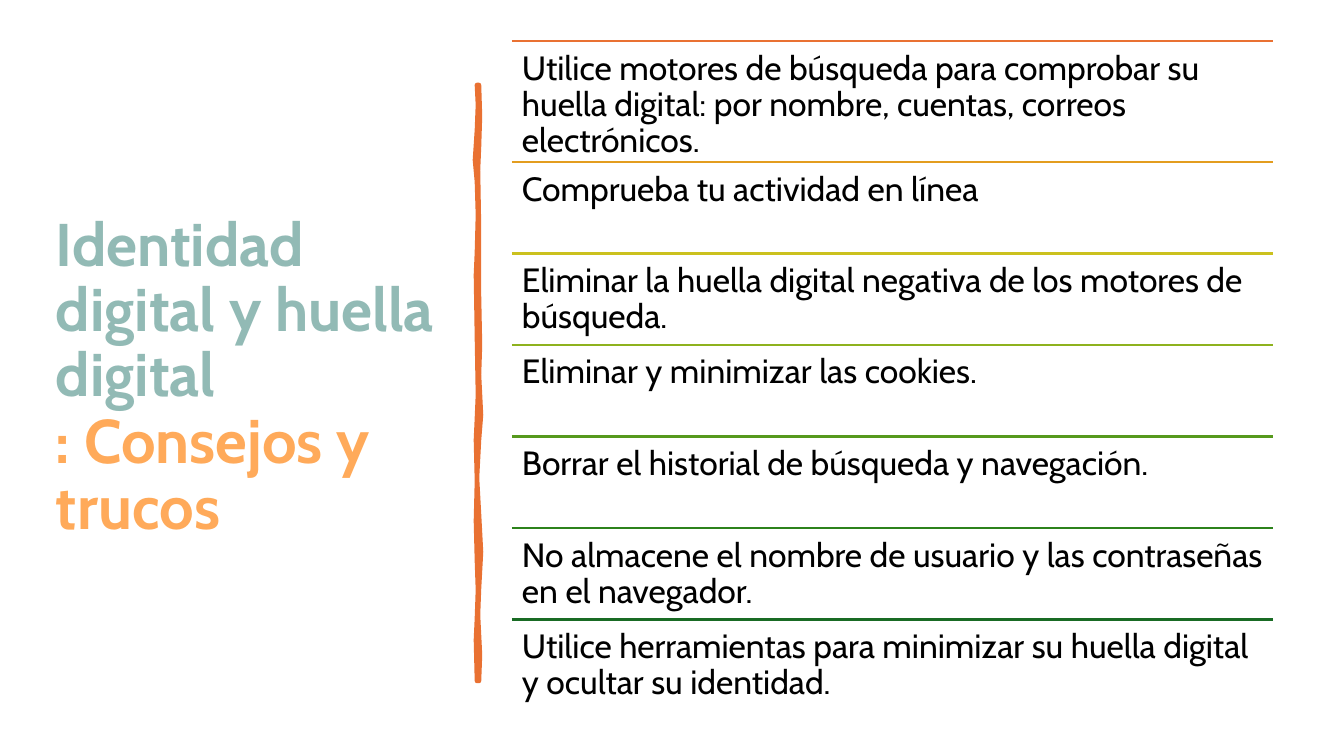
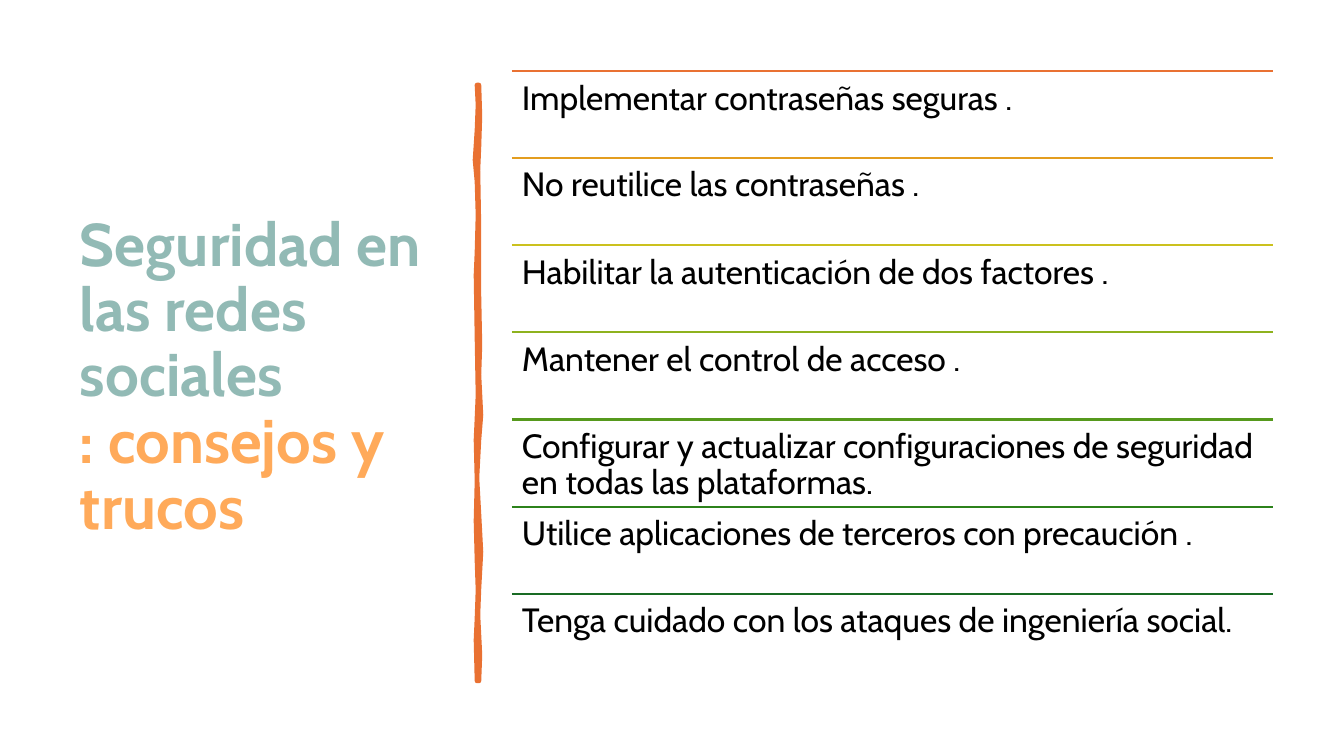
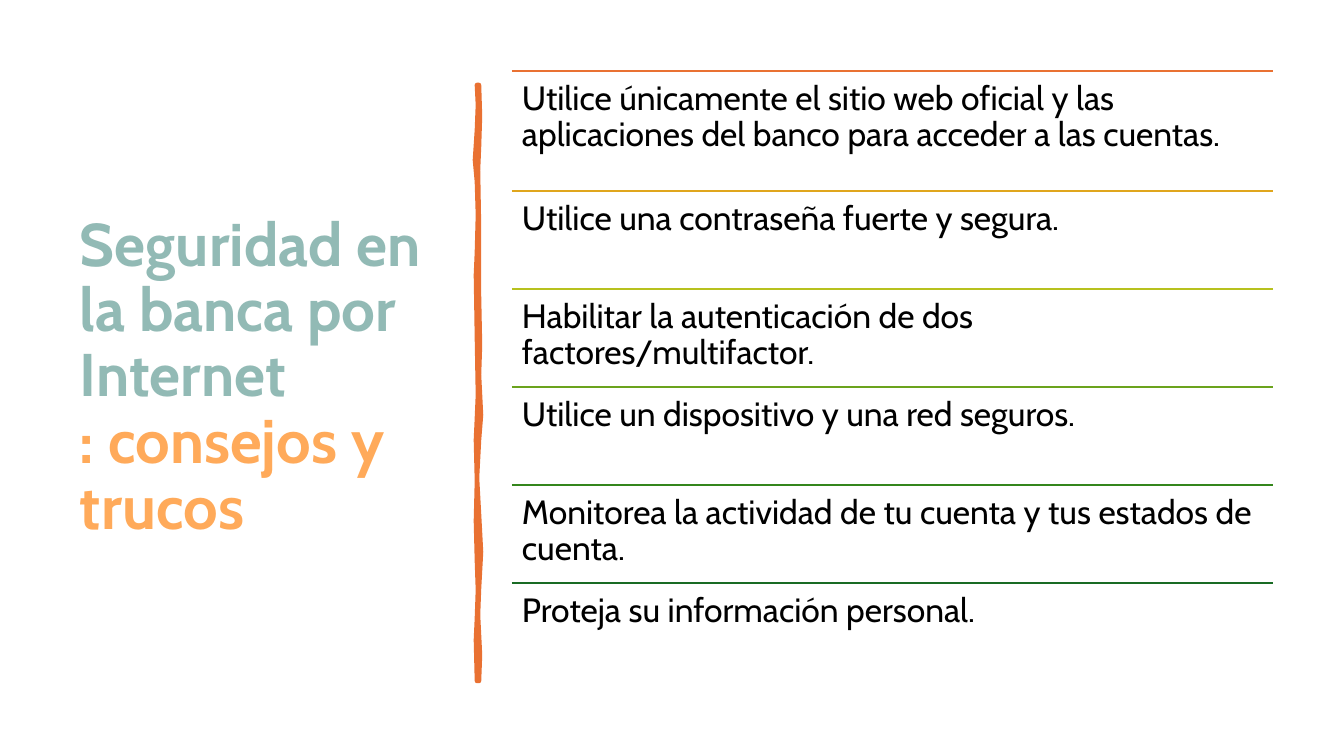
from pptx import Presentation
from pptx.dml.color import RGBColor
from pptx.enum.shapes import MSO_CONNECTOR
from pptx.enum.text import MSO_ANCHOR
from pptx.oxml.ns import qn
from pptx.util import Pt
from lxml.etree import SubElement

SCALE = 914400 / 100.8
WIDE, HIGH = 1344, 756
FONT = "Cabin"
TEAL, PEACH, RUST, BLACK = "92BAB5", "FFAA5A", "E97132", "000000"
LEFT, SPAN = 512, 761
SEVEN = [RUST, "E39D1F", "CBC11E", "8EB21E", "56991D", "2C821B", "196B24"]
SIX = [RUST, "E0A61D", "B7C11E", "6BA31D", "34861C", "196B24"]
MARGINS = ("margin_left", "margin_top", "margin_right", "margin_bottom")

BAR = [
    (479, 85), (480, 116), (479, 147), (478, 170), (479, 228), (479, 296),
    (480, 345), (479, 375), (481, 415), (479, 440), (477, 478), (479, 514),
    (481, 552), (479, 589), (478, 615), (480, 655), (479, 681),
    (477, 681), (476, 640), (477, 618), (478, 590), (477, 561), (476, 521),
    (477, 481), (476, 440), (477, 418), (478, 395), (477, 338), (476, 275),
    (477, 252), (478, 215), (477, 182), (475, 160), (477, 130), (478, 105),
    (477, 85),
]

SLIDES = [
    {
        "title": ("Identidad digital y huella digital", ": Consejos y trucos"),
        "box": (46, 401),
        "ends": (41, 162, 711),
        "hues": SEVEN,
        "tips": [
            "Utilice motores de búsqueda para comprobar su huella digital: "
            "por nombre, cuentas, correos electrónicos.",
            "Comprueba tu actividad en línea",
            "Eliminar la huella digital negativa de los motores de búsqueda.",
            "Eliminar y minimizar las cookies.",
            "Borrar el historial de búsqueda y navegación.",
            "No almacene el nombre de usuario y las contraseñas en el navegador.",
            "Utilice herramientas para minimizar su huella digital "
            "y ocultar su identidad.",
        ],
    },
    {
        "title": ("Seguridad en las redes sociales", ": consejos y trucos"),
        "box": (70, 377),
        "ends": (71, 158, 681),
        "hues": SEVEN,
        "tips": [
            "Implementar contraseñas seguras .",
            "No reutilice las contraseñas .",
            "Habilitar la autenticación de dos factores .",
            "Mantener el control de acceso .",
            "Configurar y actualizar configuraciones de seguridad "
            "en todas las plataformas.",
            "Utilice aplicaciones de terceros con precaución .",
            "Tenga cuidado con los ataques de ingeniería social.",
        ],
    },
    {
        "title": ("Seguridad en la banca por Internet", ": consejos y trucos"),
        "box": (70, 377),
        "ends": (71, 191, 681),
        "hues": SIX,
        "tips": [
            "Utilice únicamente el sitio web oficial y las aplicaciones "
            "del banco para acceder a las cuentas.",
            "Utilice una contraseña fuerte y segura.",
            "Habilitar la autenticación de dos factores/multifactor.",
            "Utilice un dispositivo y una red seguros.",
            "Monitorea la actividad de tu cuenta y tus estados de cuenta.",
            "Proteja su información personal.",
        ],
    },
]


def px(size):
    return round(size * SCALE)


def color(code):
    return RGBColor.from_string(code)


def apply(item, form):
    for key, value in form.items():
        setattr(item, key, value)


def add_run(para, text, size, hue, bold=False):
    run = para.add_run()
    run.text = text
    apply(run.font, {"name": FONT, "size": Pt(size), "bold": bold})
    run.font.color.rgb = color(hue)


def add_box(slide, area, anchor):
    frame = slide.shapes.add_textbox(*map(px, area)).text_frame
    apply(frame, {"word_wrap": True, "vertical_anchor": anchor})
    apply(frame, dict.fromkeys(MARGINS, px(10)))
    para = frame.paragraphs[0]
    para.line_spacing = 0.9
    return para


def add_title(slide, parts, left, width):
    para = add_box(slide, (left, 71, width, 616), MSO_ANCHOR.MIDDLE)
    add_run(para, parts[0], 43, TEAL, True)
    para.add_line_break()
    add_run(para, parts[1], 44, PEACH, True)


def add_bar(slide):
    pen = slide.shapes.build_freeform(*BAR[0], scale=SCALE)
    pen.add_line_segments(BAR[1:], close=True)
    bar = pen.convert_to_shape()
    bar.shadow.inherit = False
    bar.fill.solid()
    bar.fill.fore_color.rgb = color(RUST)
    bar.line.color.rgb = color(RUST)
    bar.line.width = Pt(3.25)


def add_rule(slide, top, hue):
    ends = map(px, (LEFT, top, LEFT + SPAN, top))
    rule = slide.shapes.add_connector(MSO_CONNECTOR.STRAIGHT, *ends)
    rule.line.color.rgb = color(hue)
    rule.line.width = Pt(1.5)
    SubElement(rule._element.spPr, qn("a:effectLst"))


def add_tips(slide, tips, hues, ends):
    first, second, last = ends
    count = len(tips) - 1
    step = (last - second) / count
    tops = [first] + [second + step * i for i in range(count + 1)]
    for tip, hue, top, end in zip(tips, hues, tops, tops[1:]):
        add_rule(slide, top, hue)
        para = add_box(slide, (LEFT, top, SPAN, end - top), MSO_ANCHOR.TOP)
        add_run(para, tip, 24, BLACK)


def main():
    deck = Presentation()
    apply(deck, {"slide_width": px(WIDE), "slide_height": px(HIGH)})
    for page in SLIDES:
        slide = deck.slides.add_slide(deck.slide_layouts[6])
        add_title(slide, page["title"], *page["box"])
        add_bar(slide)
        add_tips(slide, page["tips"], page["hues"], page["ends"])
    deck.save("out.pptx")


if __name__ == "__main__":
    main()
